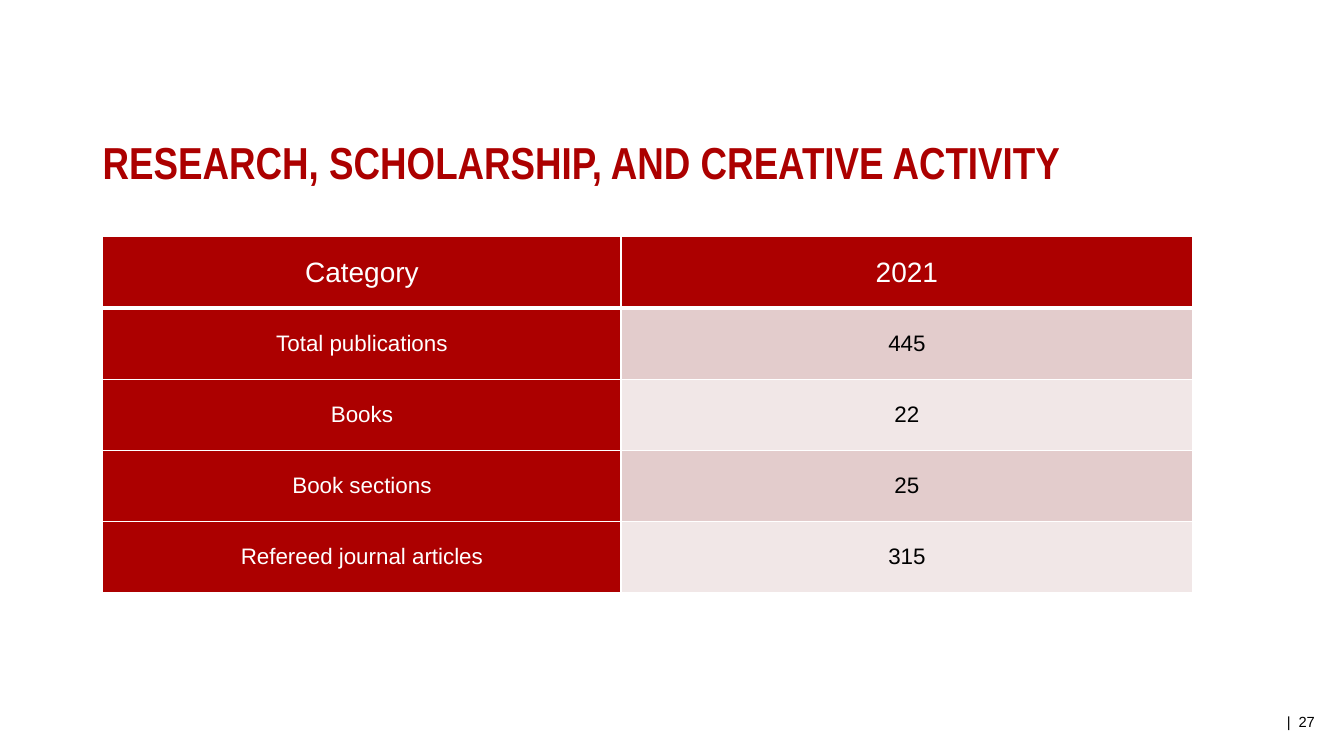
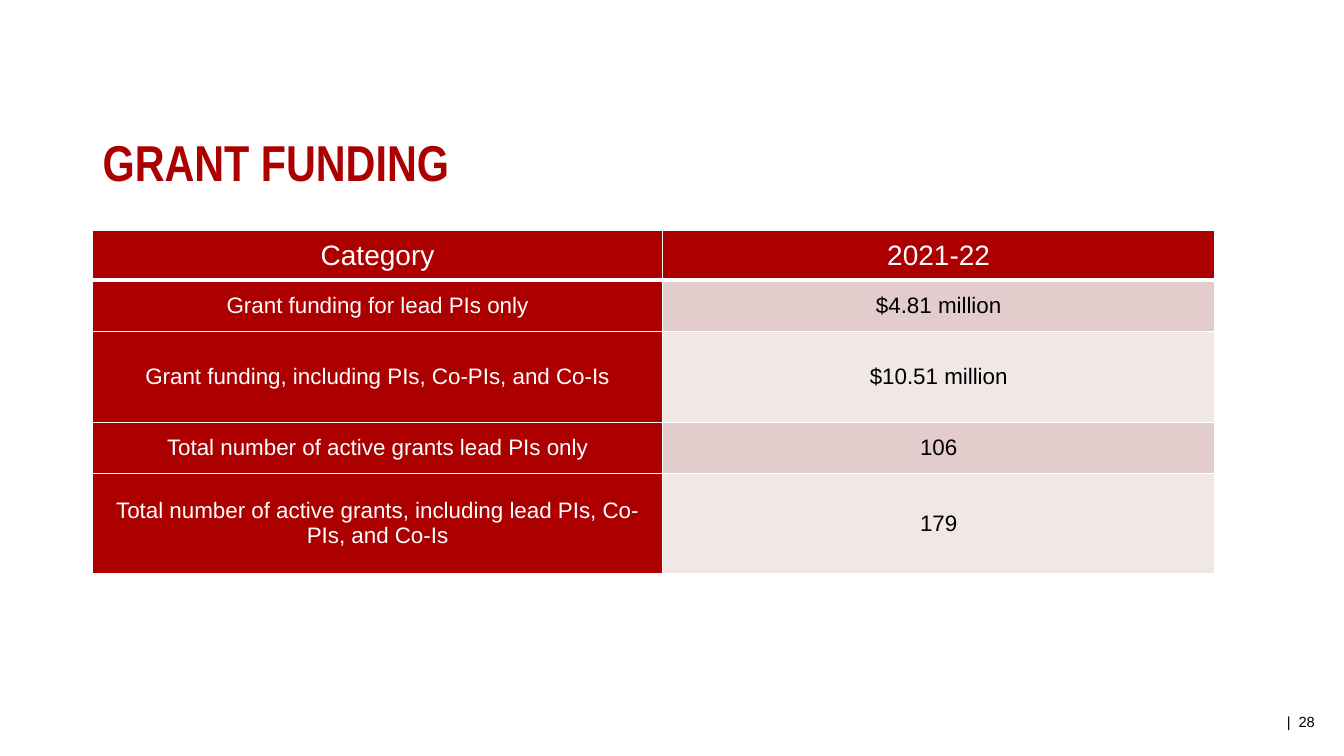
import pptx
import pptx.util
import pptx.dml.color
import pptx.enum.text
import pptx.oxml
import pptx.oxml.ns
from pptx.util import Inches

ALIGN = pptx.enum.text.PP_ALIGN
MIDDLE = pptx.enum.text.MSO_ANCHOR.MIDDLE


class Deck:
    COLORS = {
        "red": "AC0000",
        "white": "FFFFFF",
        "black": "000000",
        "band_dark": "E3CCCC",
        "band_light": "F1E7E7",
    }
    BODY_FONT = "Arial"
    TITLE_FONT = "Arial Narrow"

    def __init__(self):
        self.presentation = pptx.Presentation()
        self.presentation.slide_width = Inches(13.33)
        self.presentation.slide_height = Inches(7.5)
        self.slide = None

    def color(self, name):
        return pptx.dml.color.RGBColor.from_string(self.COLORS[name])

    def format_text(self, frame, text, size, color, align, font=BODY_FONT, bold=False):
        frame.text = text
        paragraph = frame.paragraphs[0]
        paragraph.alignment = align
        style = paragraph.runs[0].font
        style.name = font
        style.size = pptx.util.Pt(size)
        style.bold = bold
        style.color.rgb = self.color(color)

    def text_box(self, box, text, **style):
        frame = self.slide.shapes.add_textbox(*map(Inches, box)).text_frame
        frame.word_wrap = True
        frame.vertical_anchor = MIDDLE
        self.format_text(frame, text, **style)

    def add_slide(self, title, title_size, number):
        """Start a slide with its title and page number."""
        blank = self.presentation.slide_layouts[6]
        self.slide = self.presentation.slides.add_slide(blank)
        self.text_box((0.92, 0.97, 11.05, 1.26), title, size=title_size, color="red",
                      align=ALIGN.LEFT, font=self.TITLE_FONT, bold=True)
        self.text_box((10.14, 6.96, 3, 0.4), f"|  {number}", size=10.5,
                      color="black", align=ALIGN.RIGHT)

    def cell_borders(self, cell, bottom_width):
        properties = cell._tc.get_or_add_tcPr()
        widths = {"lnL": 1, "lnR": 1, "lnT": 1, "lnB": bottom_width}
        for position, (side, width) in enumerate(widths.items()):
            line = pptx.oxml.parse_xml(
                f'<a:{side} {pptx.oxml.ns.nsdecls("a")} w="{pptx.util.Pt(width)}">'
                f'<a:solidFill><a:srgbClr val="{self.COLORS["white"]}"/></a:solidFill>'
                f'</a:{side}>')
            properties.insert(position, line)

    def table(self, left, top, column_widths, row_heights, rows):
        """Add a table with a red header row and label column, and banded values."""
        grid = self.slide.shapes.add_table(
            len(rows), len(column_widths), Inches(left), Inches(top),
            Inches(sum(column_widths)), Inches(sum(row_heights))).table
        for column, width in zip(grid.columns, column_widths):
            column.width = Inches(width)
        for r, (height, texts) in enumerate(zip(row_heights, rows)):
            grid.rows[r].height = Inches(height)
            is_header = r == 0
            for c, text in enumerate(texts):
                cell = grid.cell(r, c)
                on_red = is_header or c == 0
                band = "band_dark" if r % 2 else "band_light"
                cell.fill.solid()
                cell.fill.fore_color.rgb = self.color("red" if on_red else band)
                cell.vertical_anchor = MIDDLE
                cell.margin_left = cell.margin_right = Inches(0.07)
                cell.margin_top = cell.margin_bottom = 0
                self.format_text(cell.text_frame, text, 20 if is_header else 16,
                                 "white" if on_red else "black", ALIGN.CENTER)
                self.cell_borders(cell, 3 if is_header else 1)


def main():
    deck = Deck()

    deck.add_slide("RESEARCH, SCHOLARSHIP, AND CREATIVE ACTIVITY", 32, 27)
    publications = [
        ("Category", "2021"),
        ("Total publications", "445"),
        ("Books", "22"),
        ("Book sections", "25"),
        ("Refereed journal articles", "315"),
    ]
    even_heights = [3.53 / len(publications)] * len(publications)
    deck.table(1.02, 2.35, (5.14, 5.67), even_heights, publications)

    deck.add_slide("GRANT FUNDING", 36, 28)
    grants = [
        ("Category", "2021-22"),
        ("Grant funding for lead PIs only", "$4.81 million"),
        ("Grant funding, including PIs, Co-PIs, and Co-Is", "$10.51 million"),
        ("Total number of active grants lead PIs only", "106"),
        ("Total number of active grants, including lead PIs, Co-PIs, and Co-Is", "179"),
    ]
    deck.table(0.92, 2.29, (5.65, 5.48), (0.49, 0.51, 0.9, 0.51, 0.99), grants)

    deck.presentation.save("out.pptx")


if __name__ == "__main__":
    main()
